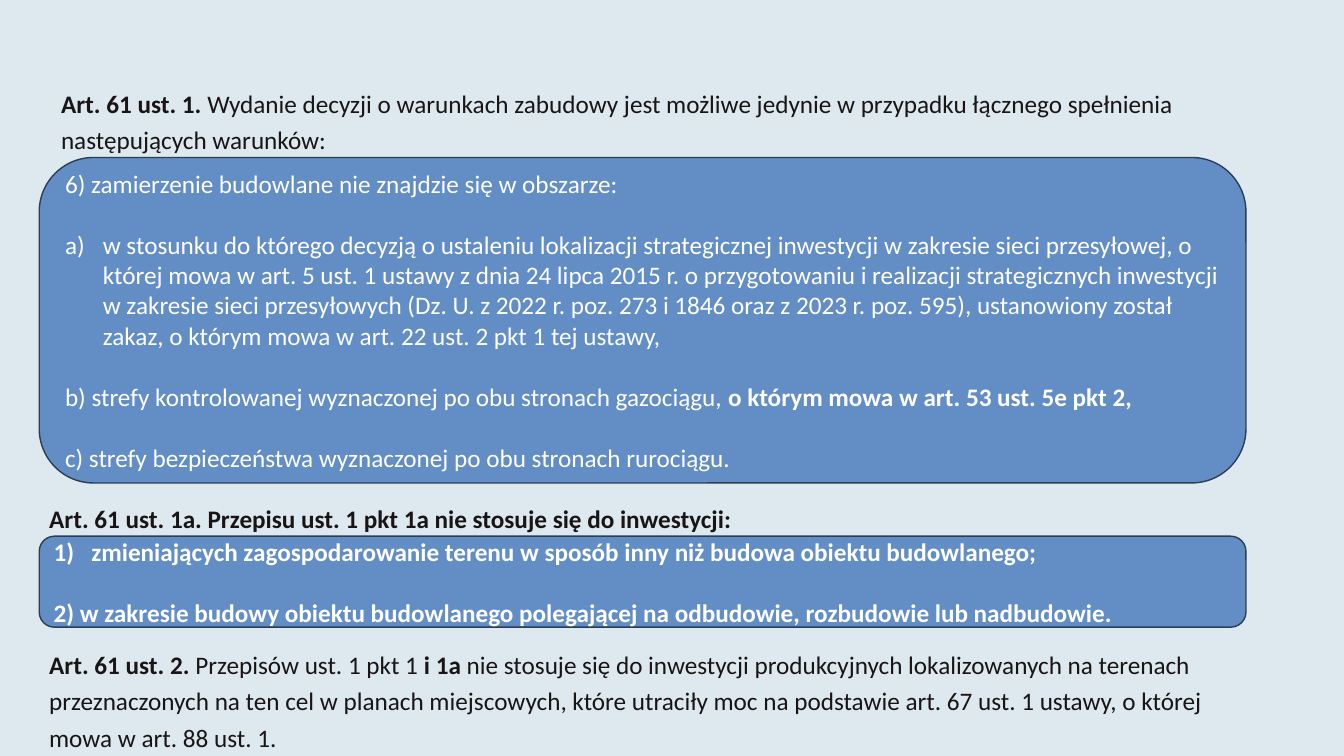
from pptx import Presentation
from pptx.dml.color import RGBColor
from pptx.enum.shapes import MSO_SHAPE
from pptx.enum.text import MSO_ANCHOR, PP_ALIGN
from pptx.oxml.ns import qn
from pptx.util import Pt
from lxml.etree import SubElement

BACKGROUND = "DEE8EF"
INK = "191515"
WHITE = "FFFFFF"
PANEL_FILL = "628EC5"
PANEL_LINE = "2B3E56"
LEFT = 28
TEXT_WIDTH = 907
PANEL_WIDTH = 862
LIST_INDENT = 27


def color(value):
    return RGBColor.from_string(value)


def number_paragraph(paragraph, scheme):
    properties = paragraph._p.get_or_add_pPr()
    properties.set("marL", str(Pt(LIST_INDENT)))
    properties.set("indent", str(-Pt(LIST_INDENT)))
    SubElement(properties, qn("a:buFont"), typeface="+mj-lt")
    SubElement(properties, qn("a:buAutoNum"), type=scheme)


def add_text(paragraph, text, bold=False, ink=INK, size=18):
    run = paragraph.add_run()
    run.text = text
    run.font.name = "Calibri"
    run.font.size = Pt(size)
    run.font.bold = bold
    run.font.color.rgb = color(ink)


def fill_frame(frame, paragraphs, ink, line_spacing=1.0, gap=0, numbering=None):
    frame.word_wrap = True
    for index, runs in enumerate(paragraphs):
        paragraph = frame.paragraphs[0] if index == 0 else frame.add_paragraph()
        paragraph.alignment = PP_ALIGN.LEFT
        paragraph.line_spacing = line_spacing
        if index and gap:
            paragraph.space_before = Pt(gap)
        if numbering and index in numbering:
            number_paragraph(paragraph, numbering[index])
        for text, bold in runs:
            add_text(paragraph, text, bold=bold, ink=ink)


def add_article(slide, left, top, width, height, paragraphs):
    box = slide.shapes.add_textbox(Pt(left), Pt(top), Pt(width), Pt(height))
    fill_frame(box.text_frame, paragraphs, INK, line_spacing=1.2)


def add_panel(slide, left, top, width, height, paragraphs, numbering):
    panel = slide.shapes.add_shape(
        MSO_SHAPE.ROUNDED_RECTANGLE, Pt(left), Pt(top), Pt(width), Pt(height)
    )
    panel.shadow.inherit = False
    panel.fill.solid()
    panel.fill.fore_color.rgb = color(PANEL_FILL)
    panel.line.color.rgb = color(PANEL_LINE)
    panel.line.width = Pt(1)
    panel.text_frame.vertical_anchor = MSO_ANCHOR.MIDDLE
    fill_frame(panel.text_frame, paragraphs, WHITE, gap=22, numbering=numbering)


def build_slide(presentation):
    slide = presentation.slides.add_slide(presentation.slide_layouts[6])
    slide.background.fill.solid()
    slide.background.fill.fore_color.rgb = color(BACKGROUND)

    add_article(slide, 36.5, 55, TEXT_WIDTH, 57.5, [[
        ("Art. 61 ust. 1. ", True),
        ("Wydanie decyzji o warunkach zabudowy jest możliwe jedynie w przypadku "
         "łącznego spełnienia następujących warunków:", False),
    ]])
    add_panel(slide, LEFT, 112.5, PANEL_WIDTH, 232.5, [
        [("6) zamierzenie budowlane nie znajdzie się w obszarze:", False)],
        [("w stosunku do którego decyzją o ustaleniu lokalizacji strategicznej "
          "inwestycji w zakresie sieci przesyłowej, o której mowa w art. 5 ust. 1 "
          "ustawy z dnia 24 lipca 2015 r. o przygotowaniu i realizacji "
          "strategicznych inwestycji w zakresie sieci przesyłowych (Dz. U. z 2022 r. "
          "poz. 273 i 1846 oraz z 2023 r. poz. 595), ustanowiony został zakaz, "
          "o którym mowa w art. 22 ust. 2 pkt 1 tej ustawy,", False)],
        [("b) strefy kontrolowanej wyznaczonej po obu stronach gazociągu, ", False),
         ("o którym mowa w art. 53 ust. 5e pkt 2,", True)],
        [("c) strefy bezpieczeństwa wyznaczonej po obu stronach rurociągu.", False)],
    ], {1: "alphaLcParenR"})

    add_article(slide, LEFT, 351.5, TEXT_WIDTH, 31.5, [[
        ("Art. 61 ust. 1a. Przepisu ust. 1 pkt 1a nie stosuje się do inwestycji:", True),
    ]])
    add_panel(slide, LEFT, 383, PANEL_WIDTH, 65, [
        [("zmieniających zagospodarowanie terenu w sposób inny niż budowa obiektu "
          "budowlanego;", True)],
        [("2) w zakresie budowy obiektu budowlanego polegającej na odbudowie, "
          "rozbudowie lub nadbudowie.", True)],
    ], {0: "arabicParenR"})

    add_article(slide, LEFT, 456, TEXT_WIDTH, 84, [
        [("Art. 61 ust. 2.", True),
         (" Przepisów ust. 1 pkt 1 ", False),
         ("i 1a ", True),
         ("nie stosuje się do inwestycji produkcyjnych lokalizowanych na terenach "
          "przeznaczonych na ten cel w planach miejscowych, które utraciły moc na "
          "podstawie art. 67 ust. 1 ustawy, o której", False)],
        [("mowa w art. 88 ust. 1.", False)],
    ])


def main():
    presentation = Presentation()
    presentation.slide_width = Pt(960)
    presentation.slide_height = Pt(540)
    build_slide(presentation)
    presentation.save("out.pptx")


if __name__ == "__main__":
    main()
